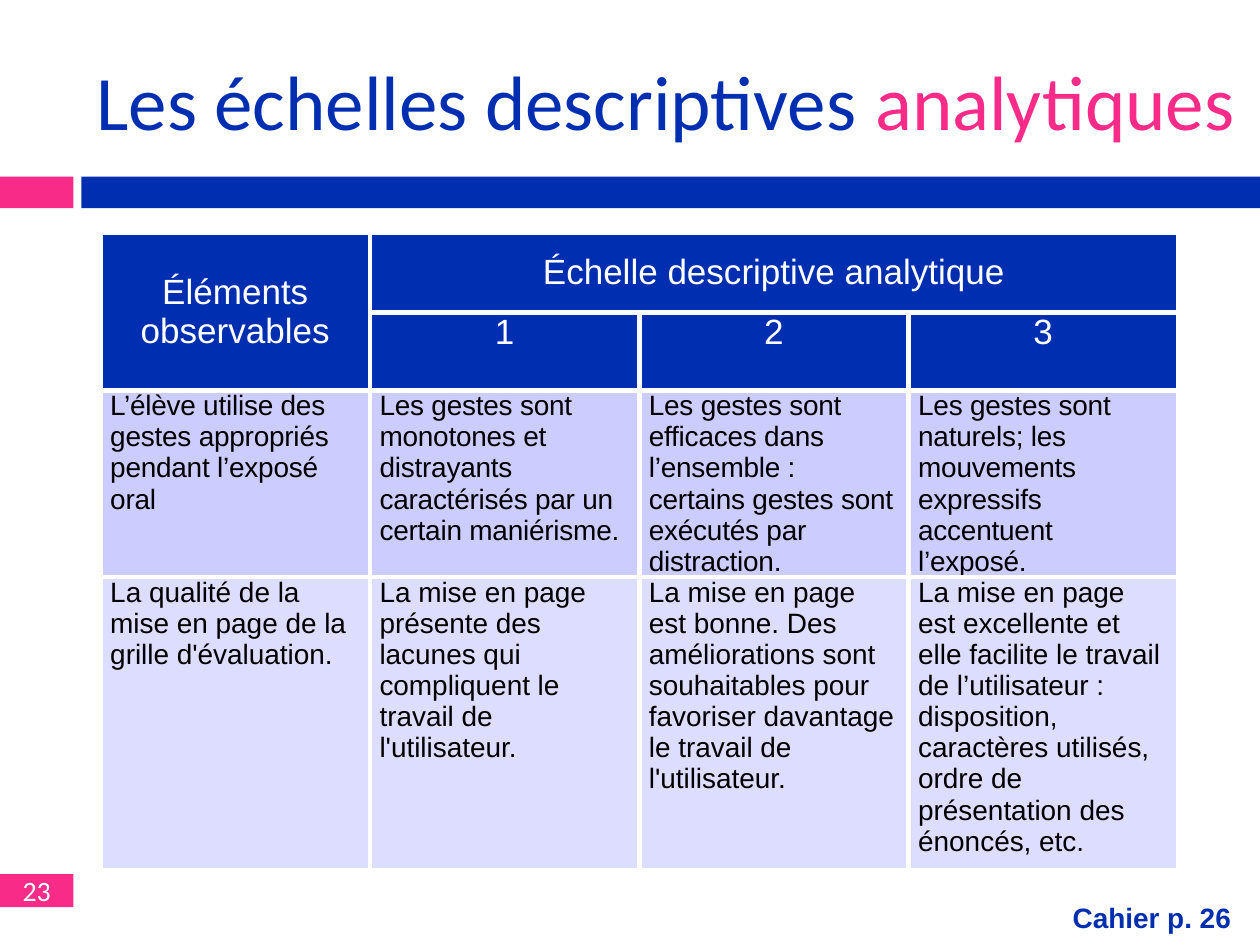
from pptx import Presentation
from pptx.dml.color import RGBColor as RGB
from pptx.enum.shapes import MSO_SHAPE as Shape
from pptx.enum.text import MSO_ANCHOR as Anchor, PP_ALIGN as Align
from pptx.oxml import parse_xml
from pptx.oxml.ns import nsdecls
from pptx.util import Pt

# Content
TITLE = [("Les échelles descriptives ", "blue"), ("analytiques", "pink")]
HEAD = [
    ["Éléments observables", "Échelle descriptive analytique", "", ""],
    ["", "1", "2", "3"],
]
BODY = [
    ["L’élève utilise des gestes appropriés pendant l’exposé oral",
     "Les gestes sont monotones et distrayants caractérisés par un certain maniérisme.",
     "Les gestes sont efficaces dans l’ensemble : certains gestes sont exécutés par distraction.",
     "Les gestes sont naturels; les mouvements expressifs accentuent l’exposé."],
    ["La qualité de la mise en page de la grille d'évaluation.",
     "La mise en page présente des lacunes qui compliquent le travail de l'utilisateur.",
     "La mise en page est bonne. Des améliorations sont souhaitables pour favoriser "
     "davantage le travail de l'utilisateur.",
     "La mise en page est excellente et elle facilite le travail de l’utilisateur : "
     "disposition, caractères utilisés, ordre de présentation des énoncés, etc."],
]
PAGE, NOTE = "23", "Cahier p. 26"

# Look
HEX = {"blue": "002EB0", "pink": "F82C88", "white": "FFFFFF", "black": "000000",
       "mauve": "CCCCFF", "pale": "DDDDFF"}
FONT = {
    "title": {"name": "Calibri", "size": Pt(44)},
    "page": {"name": "Calibri", "size": Pt(16)},
    "head": {"name": "Arial", "size": Pt(20)},
    "body": {"name": "Arial", "size": Pt(16)},
    "note": {"name": "Arial", "size": Pt(16), "bold": True},
}
BARS = [  # left, top, width, height, colour
    (0, 101, 42, 18, "pink"),
    (46.5, 101, 673.5, 18, "blue"),
    (0, 499.5, 42, 19, "pink"),
]
ROWS = [45.5, 44.5, 106.5, 167.5]
FILLS = ["blue", "blue", "mauve", "pale"]
LEFT, TOP, COL = 57.5, 133, 153.9


def tint(fill, hue):
    fill.solid()
    fill.fore_color.rgb = RGB.from_string(HEX[hue])


def put(item, **vals):
    for key, val in vals.items():
        setattr(item, key, val)


def write(para, text, kind, hue):
    run = para.add_run()
    run.text = text
    put(run.font, **FONT[kind])
    run.font.color.rgb = RGB.from_string(HEX[hue])
    return run


def edge(cell):
    props = cell._tc.get_or_add_tcPr()
    for spot, side in enumerate(("lnL", "lnR", "lnT", "lnB")):
        props.insert(spot, parse_xml(
            f'<a:{side} {nsdecls("a")} w="{Pt(3)}"><a:solidFill>'
            f'<a:srgbClr val="{HEX["white"]}"/></a:solidFill></a:{side}>'))


deck = Presentation()
put(deck, slide_width=Pt(720), slide_height=Pt(540))
slide = deck.slides.add_slide(deck.slide_layouts[5])
shapes = slide.shapes

# Colour bars and page number
for *box, hue in BARS:
    bar = shapes.add_shape(Shape.RECTANGLE, *map(Pt, box))
    bar.shadow.inherit = False
    tint(bar.fill, hue)
    bar.line.fill.background()
put(bar.text_frame, margin_top=0, margin_bottom=0, vertical_anchor=Anchor.MIDDLE)
para = bar.text_frame.paragraphs[0]
para.alignment = Align.CENTER
write(para, PAGE, "page", "white")

# Title
title = shapes.title
put(title, left=Pt(48), top=Pt(18), width=Pt(672), height=Pt(78))
title.text_frame.vertical_anchor = Anchor.MIDDLE
para = title.text_frame.paragraphs[0]
para.alignment = Align.LEFT
for text, hue in TITLE:
    write(para, text, "title", hue)

# Table
data = HEAD + BODY
grid = shapes.add_table(len(data), len(data[0]), Pt(LEFT), Pt(TOP),
                        Pt(COL * len(data[0])), Pt(sum(ROWS))).table
for col in grid.columns:
    col.width = Pt(COL)
for r, texts in enumerate(data):
    grid.rows[r].height = Pt(ROWS[r])
    top = r < len(HEAD)
    for c, text in enumerate(texts):
        cell = grid.cell(r, c)
        put(cell, margin_left=Pt(5.5), margin_right=Pt(5.5), margin_top=0, margin_bottom=0)
        tint(cell.fill, FILLS[r])
        edge(cell)
        para = cell.text_frame.paragraphs[0]
        put(para, space_after=Pt(3), alignment=Align.CENTER if top else Align.LEFT)
        if text:
            run = write(para, text, "head" if top else "body", "white" if top else "black")
            if r == len(HEAD):
                run.font._element.set("spc", "-10")
for first, last in [((0, 0), (1, 0)), ((0, 1), (0, 3))]:
    grid.cell(*first).merge(grid.cell(*last))
    grid.cell(*first).vertical_anchor = Anchor.MIDDLE

# Workbook reference
note = shapes.add_textbox(Pt(553.5), Pt(511), Pt(157), Pt(26.5))
tint(note.fill, "white")
note.text_frame.word_wrap = True
para = note.text_frame.paragraphs[0]
para.alignment = Align.RIGHT
write(para, NOTE, "note", "blue")

deck.save("out.pptx")
